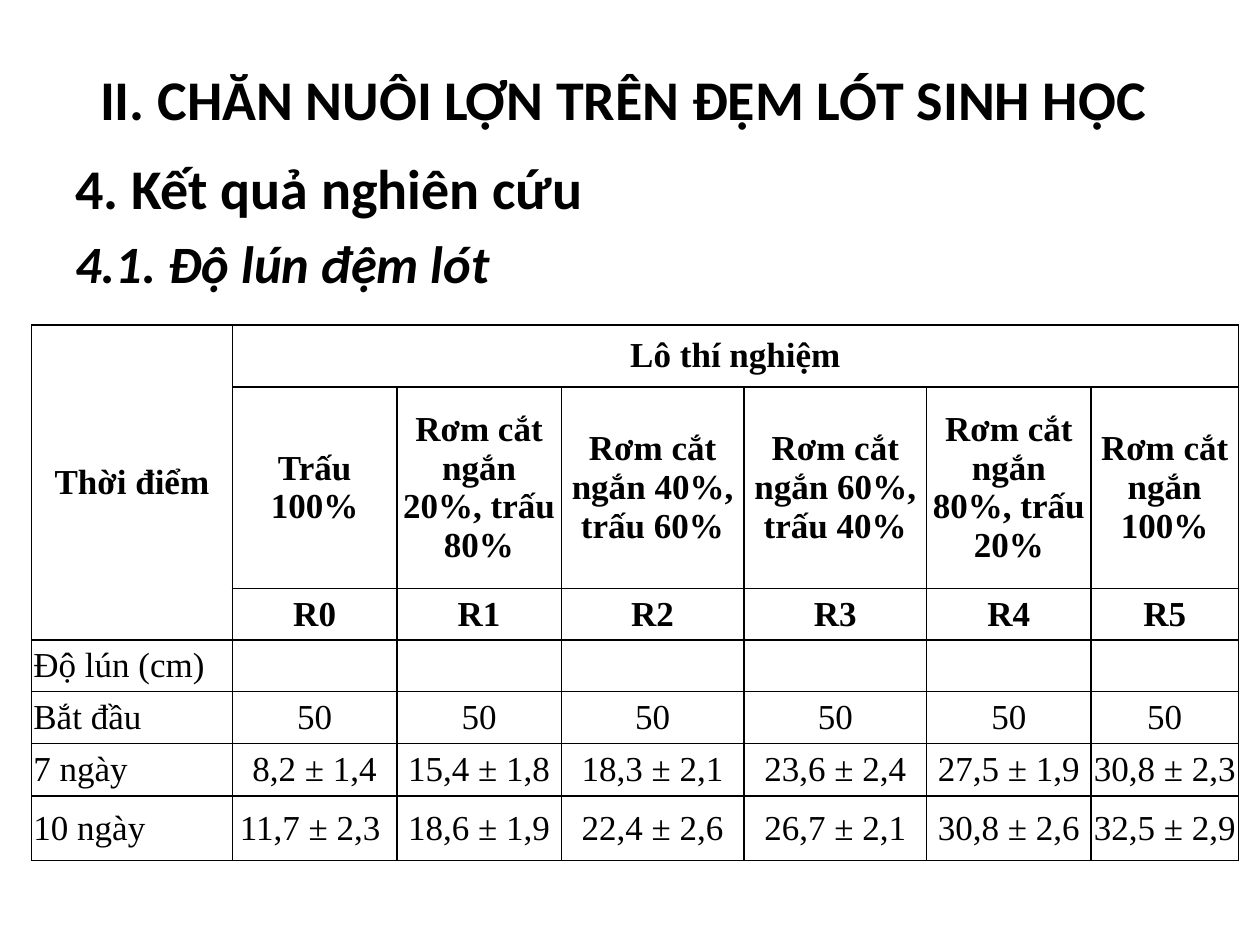
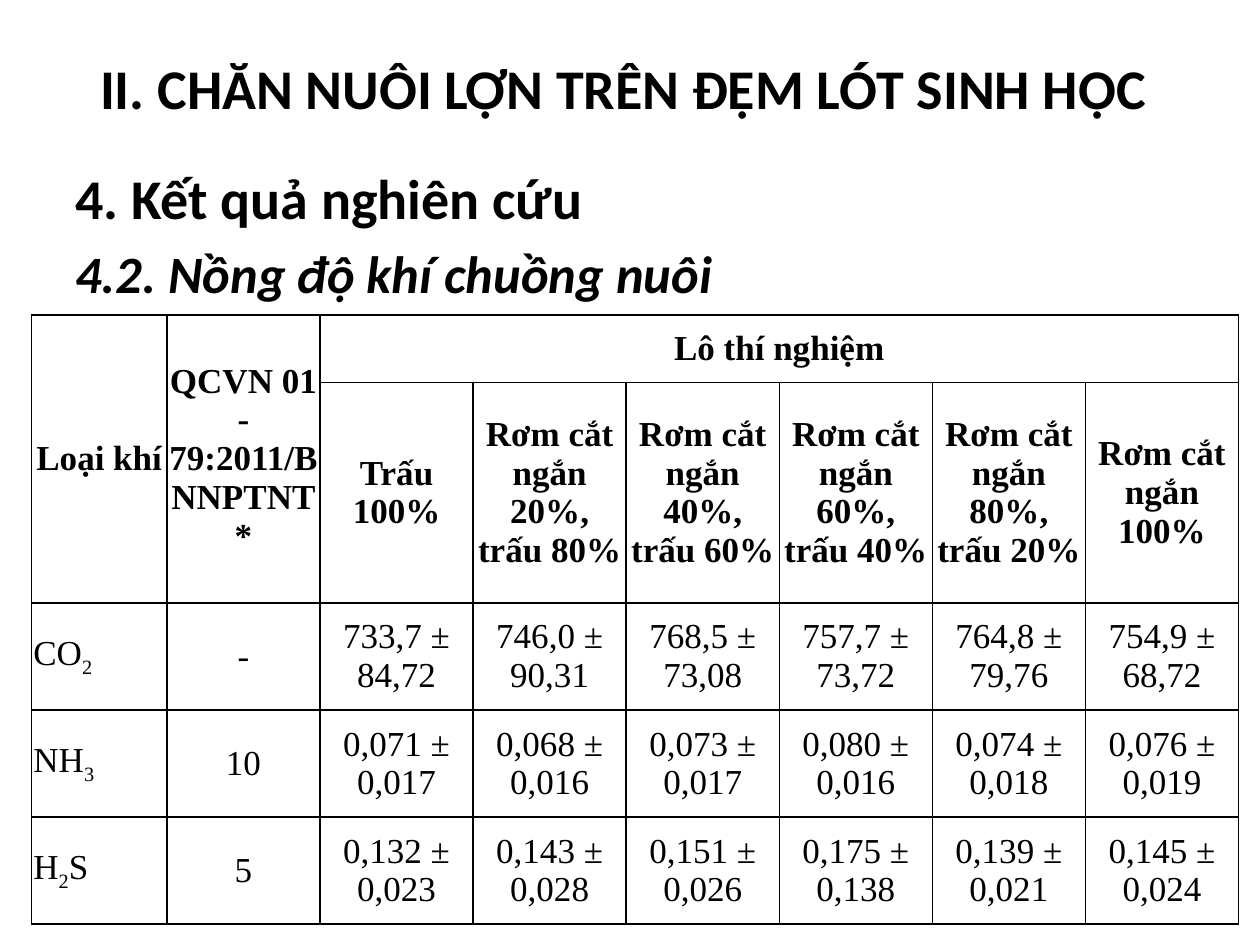
"""Two slides of results on raising pigs on biological bedding, each with a table."""
from lxml.etree import SubElement
from pptx import Presentation
from pptx.dml.color import RGBColor
from pptx.enum.text import MSO_ANCHOR, PP_ALIGN
from pptx.oxml.ns import qn
from pptx.util import Inches, Pt

deck = Presentation()
deck.slide_width, deck.slide_height = Inches(10), Inches(7.5)
COL, ROW = deck.slide_width / 40, deck.slide_height / 30

HUES = {"ink": "000000", "page": "FFFFFF"}
HEAD = {"name": "Calibri", "size": Pt(32), "bold": True}
SUB = {"name": "Calibri", "size": Pt(30), "bold": True, "italic": True}
LABEL = {"name": "Times New Roman", "size": Pt(20), "bold": True}
VALUE = {**LABEL, "bold": False}
PAD = {"margin_left": int(0.06 * COL), "margin_right": int(0.06 * COL),
       "margin_top": 0, "margin_bottom": 0, "vertical_anchor": MSO_ANCHOR.MIDDLE}

TITLE = "II. CHĂN NUÔI LỢN TRÊN ĐỆM LÓT SINH HỌC "
TOPIC = "4. Kết quả nghiên cứu"
GROUP = "Lô thí nghiệm"
MIXES = ["Trấu 100%",
         *[f"Rơm cắt ngắn {part}%, trấu {100 - part}%" for part in (20, 40, 60, 80)],
         "Rơm cắt ngắn 100%"]

PAGES = [
    {"sub": "4.1. Độ lún đệm lót", "title": 3.8, "body": 4.68, "top": 10.32, "heads": 3,
     "cols": [6.38, 5.22, 5.22, 5.8, 5.8, 5.22, 4.68],
     "rows": [1.96, 6.4, 1.64, 1.64, 1.64, 1.68, 2.04],
     "spans": [(0, 0, 2, 0), (0, 1, 0, 6)],
     "cells": [
         ["Thời điểm", GROUP],
         ["", *MIXES],
         ["", *[f"R{num}" for num in range(6)]],
         ["Độ lún (cm)"],
         ["Bắt đầu", *["50"] * 6],
         ["7 ngày", "8,2 ± 1,4", "15,4 ± 1,8", "18,3 ± 2,1", "23,6 ± 2,4",
          "27,5 ± 1,9", "30,8 ± 2,3"],
         ["10 ngày", "11,7 ± 2,3 ", "18,6 ± 1,9", "22,4 ± 2,6", "26,7 ± 2,1",
          "30,8 ± 2,6", "32,5 ± 2,9"]]},
    {"sub": "4.2. Nồng độ khí chuồng nuôi", "title": 3.12, "body": 5, "top": 10, "heads": 2,
     "cols": [4.3, *[4.86] * 7],
     "rows": [2.14, 7, 3.4, 3.4, 3.4],
     "spans": [(0, 0, 1, 0), (0, 1, 1, 1), (0, 2, 0, 7)],
     "cells": [
         ["Loại khí", "QCVN 01 - 79:2011/BNNPTNT*", GROUP],
         ["", "", *MIXES],
         ["CO_2", "-", "733,7 ± 84,72", "746,0 ± 90,31", "768,5 ± 73,08",
          "757,7 ± 73,72", "764,8 ± 79,76", "754,9 ± 68,72"],
         ["NH_3", "10", "0,071 ± 0,017", "0,068 ± 0,016", "0,073 ± 0,017",
          "0,080 ± 0,016", "0,074 ± 0,018", "0,076 ± 0,019"],
         ["H_2_S", "5", "0,132 ± 0,023", "0,143 ± 0,028", "0,151 ± 0,026",
          "0,175 ± 0,138", "0,139 ± 0,021", "0,145 ± 0,024"]]},
]


def write(para, text, form, align):
    """Fill a paragraph; underscores switch subscript on and off."""
    para.alignment = align
    for turn, part in enumerate(text.split("_")):
        if part:
            run = para.add_run()
            run.text = part
            for key, value in form.items():
                setattr(run.font, key, value)
            run.font.color.rgb = RGBColor.from_string(HUES["ink"])
            if turn % 2:
                run._r.get_or_add_rPr().set("baseline", "-25000")


def frame(cell):
    """Draw the four thin borders of a cell."""
    props = cell._tc.get_or_add_tcPr()
    for spot, side in enumerate(("lnL", "lnR", "lnT", "lnB")):
        line = SubElement(props, qn(f"a:{side}"), w=str(Pt(1)))
        fill = SubElement(line, qn("a:solidFill"))
        SubElement(fill, qn("a:srgbClr"), val=HUES["ink"])
        props.insert(spot, line)


for page in PAGES:
    slide = deck.slides.add_slide(deck.slide_layouts[6])
    slide.background.fill.solid()
    slide.background.fill.fore_color.rgb = RGBColor.from_string(HUES["page"])

    blocks = [
        (1.2, page["title"], MSO_ANCHOR.MIDDLE, PP_ALIGN.CENTER, [(TITLE, HEAD)]),
        (page["body"], 26.8 - page["body"], MSO_ANCHOR.TOP, PP_ALIGN.LEFT,
         [(TOPIC, HEAD), (page["sub"], SUB)]),
    ]
    for top, high, anchor, align, lines in blocks:
        box = slide.shapes.add_textbox(*map(int, (2 * COL, top * ROW, 36 * COL, high * ROW)))
        text = box.text_frame
        text.word_wrap, text.vertical_anchor = True, anchor
        for num, (words, form) in enumerate(lines):
            para = text.add_paragraph() if num else text.paragraphs[0]
            if num:
                para.space_before = Pt(6)
            write(para, words, form, align)

    wide, high = sum(page["cols"]) * COL, sum(page["rows"]) * ROW
    table = slide.shapes.add_table(
        len(page["rows"]), len(page["cols"]),
        *map(int, (COL, page["top"] * ROW, wide, high))).table
    table.first_row = table.horz_banding = False
    for col, size in zip(table.columns, page["cols"]):
        col.width = int(size * COL)
    for row, size in zip(table.rows, page["rows"]):
        row.height = int(size * ROW)
    for cell in table.iter_cells():
        for key, value in PAD.items():
            setattr(cell, key, value)
        cell.fill.background()
        frame(cell)
    for y, line in enumerate(page["cells"]):
        head = y < page["heads"]
        for x, words in enumerate(line):
            align = PP_ALIGN.CENTER if head or x else PP_ALIGN.LEFT
            write(table.cell(y, x).text_frame.paragraphs[0], words,
                  LABEL if head else VALUE, align)
    for y, x, end, last in page["spans"]:
        table.cell(y, x).merge(table.cell(end, last))

deck.save("out.pptx")
